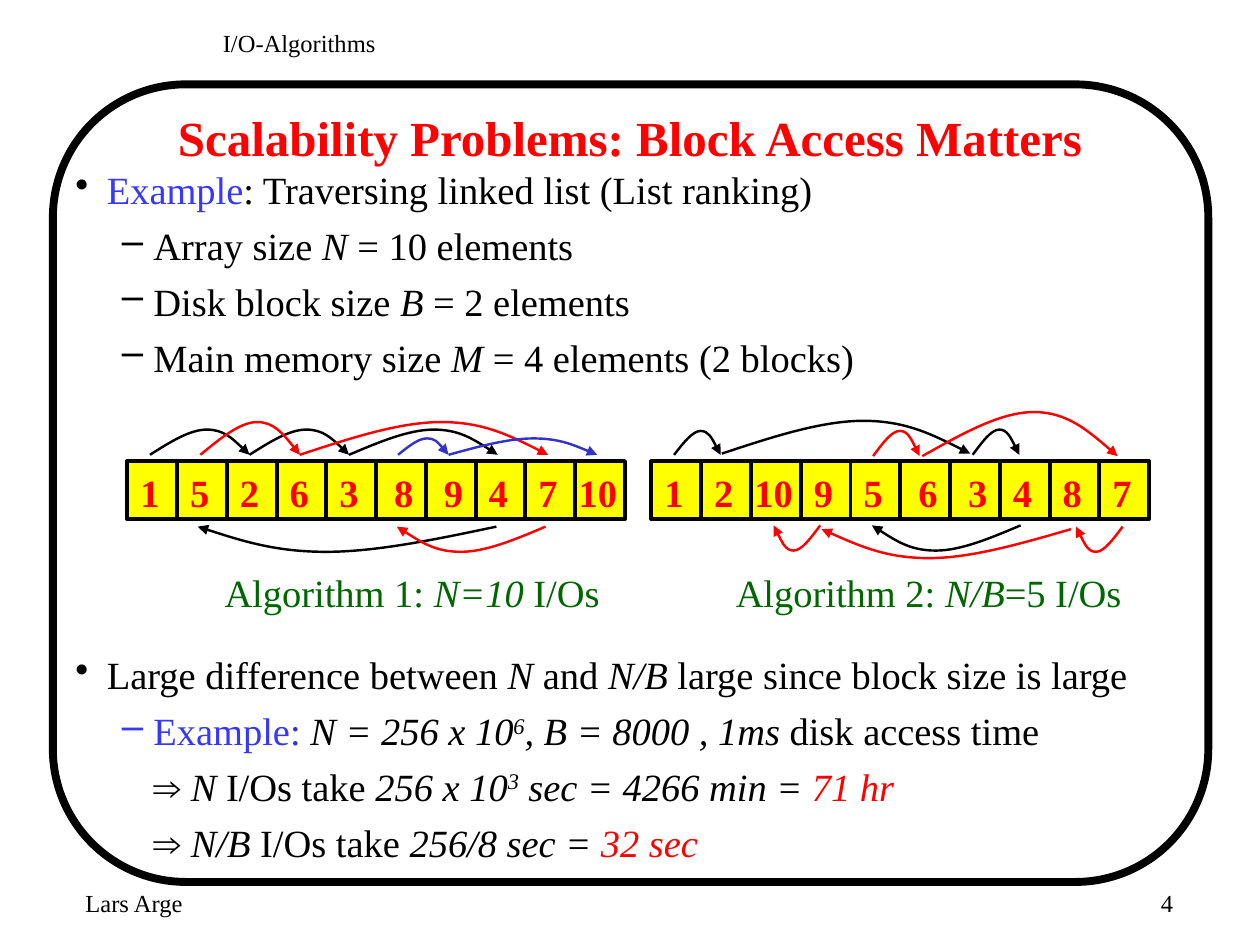
"""Build the slide on block access and linked list traversal."""
import pptx
import pptx.dml.color
import pptx.enum.shapes
import pptx.enum.text
import pptx.oxml
import pptx.oxml.ns
import pptx.util
import lxml.etree

Inches = pptx.util.Inches
ALIGN = pptx.enum.text.PP_ALIGN
SHAPE = pptx.enum.shapes.MSO_SHAPE
qn = pptx.oxml.ns.qn

THEME = {
    "font": "Times New Roman",
    "black": "000000", "red": "FF0000", "yellow": "FFFF00", "green": "006600",
    "blue": "3737FF", "navy": "3333CC",
    "title": 28, "body": 22, "footer": 14,
    "frame": 4.5, "grid": 2.25, "thin": 1.38,
}


def style_line(shape, color, width):
    line = shape.line
    line.color.rgb = pptx.dml.color.RGBColor.from_string(THEME[color])
    line.width = pptx.util.Pt(THEME[width])
    properties = shape.element.spPr
    if properties.find(qn("a:effectLst")) is None:
        lxml.etree.SubElement(properties, qn("a:effectLst"))
    return properties.find(qn("a:ln"))


def add_text(box, paragraphs, size, color="black", align=ALIGN.LEFT, bold=False, wrap=True,
             anchor=pptx.enum.text.MSO_ANCHOR.TOP):
    frame = slide.shapes.add_textbox(*map(Inches, box)).text_frame
    for name, value in {"word_wrap": wrap, "vertical_anchor": anchor}.items():
        setattr(frame, name, value)
    for index, (bullet, left, hang, runs) in enumerate(paragraphs):
        paragraph = frame.paragraphs[0] if index == 0 else frame.add_paragraph()
        paragraph.alignment = align
        if len(paragraphs) > 1:
            paragraph.space_after = pptx.util.Pt(5.5)
        properties = paragraph._p.get_or_add_pPr()
        properties.set("marL", str(Inches(left)))
        properties.set("indent", str(Inches(-hang)))
        if bullet == "•":
            bullet_color = lxml.etree.SubElement(properties, qn("a:buClr"))
            lxml.etree.SubElement(bullet_color, qn("a:srgbClr"), val=THEME["black"])
        if bullet:
            lxml.etree.SubElement(properties, qn("a:buChar"), char=bullet)
        for text, style, *run_color in runs:
            run = paragraph.add_run()
            run.text = text
            values = {"name": THEME["font"], "size": pptx.util.Pt(THEME[size]),
                      "bold": bold, "italic": "i" in style}
            for name, value in values.items():
                setattr(run.font, name, value)
            rgb = THEME[run_color[0] if run_color else color]
            run.font.color.rgb = pptx.dml.color.RGBColor.from_string(rgb)
            if "^" in style:
                run._r.get_or_add_rPr().set("baseline", "30000")


presentation = pptx.Presentation()
presentation.slide_width, presentation.slide_height = Inches(10), Inches(7.5)
slide = presentation.slides.add_slide(presentation.slide_layouts[6])

frame_shape = slide.shapes.add_shape(
    SHAPE.FLOWCHART_ALTERNATE_PROCESS, *map(Inches, (0.42, 0.67, 9.17, 6.33)))
frame_shape.fill.background()
style_line(frame_shape, "black", "frame")

add_text((0.75, 0.75, 8.5, 0.67), [("", 0, 0, [("Scalability Problems: Block Access Matters", "")])],
         "title", "red", ALIGN.CENTER, bold=True, anchor=pptx.enum.text.MSO_ANCHOR.MIDDLE)

setup = [
    ("•", 0.25, 0.25, [("Example", "", "blue"), (": Traversing linked list (List ranking)", "")]),
    ("–", 0.62, 0.25, [("Array size ", ""), ("N", "i"), (" = 10 elements", "")]),
    ("–", 0.62, 0.25, [("Disk block size ", ""), ("B", "i"), (" = 2 elements", "")]),
    ("–", 0.62, 0.25, [("Main memory size ", ""), ("M", "i"), (" = 4 elements (2 blocks)", "")]),
]
conclusion = [
    ("•", 0.25, 0.25, [("Large difference between ", ""), ("N", "i"), (" and ", ""), ("N/B", "i"),
                       (" large since block size is large", "")]),
    ("–", 0.62, 0.25, [("Example", "", "blue"), (":", "", "navy"), (" N = 256 x 10", "i"),
                       ("6", "i^"), (", B = 8000 , 1ms ", "i"), ("disk access time", "")]),
    ("", 0.62, 0, [("⇒ ", ""), ("N ", "i"), ("I/Os take", ""), (" 256 x 10", "i"), ("3", "i^"),
                   (" sec = 4266 min = ", "i"), ("71 hr", "i", "red")]),
    ("", 0.62, 0, [("⇒ ", ""), ("N/B ", "i"), ("I/Os take", ""), (" 256/8 sec = ", "i"),
                   ("32 sec", "i", "red")]),
]
add_text((0.5, 1.27, 8.83, 1.9), setup, "body")
add_text((0.5, 5.12, 8.83, 1.9), conclusion, "body")

labels = [
    ((1.28, 4.47, 3.98, 0.47), [("Algorithm 1: ", ""), ("N=10", "i"), (" I/Os", "")]),
    ((5.72, 4.47, 3.3, 0.47), [("Algorithm 2: ", ""), ("N/B", "i"), ("=5 I/Os", "")]),
]
for box, runs in labels:
    add_text(box, [("", 0, 0, runs)], "body", "green", ALIGN.CENTER)

array_top, array_height, array_width = 3.66, 0.46, 3.95
cell_width = array_width / 10
arrays = [(1.01, [1, 5, 2, 6, 3, 8, 9, 4, 7, 10]), (5.17, [1, 2, 10, 9, 5, 6, 3, 4, 8, 7])]
for array_left, numbers in arrays:
    for block in range(5):
        block_shape = slide.shapes.add_shape(
            SHAPE.RECTANGLE, Inches(array_left + 2 * block * cell_width), Inches(array_top),
            Inches(2 * cell_width), Inches(array_height))
        block_shape.fill.solid()
        block_shape.fill.fore_color.rgb = pptx.dml.color.RGBColor.from_string(THEME["yellow"])
        style_line(block_shape, "black", "thin")
    border = slide.shapes.add_shape(
        SHAPE.RECTANGLE, *map(Inches, (array_left, array_top, array_width, array_height)))
    border.fill.background()
    style_line(border, "black", "grid")
    for column, number in enumerate(numbers):
        cell_left = array_left + column * cell_width
        if column:
            divider = slide.shapes.add_connector(
                pptx.enum.shapes.MSO_CONNECTOR.STRAIGHT, Inches(cell_left), Inches(array_top),
                Inches(cell_left), Inches(array_top + array_height))
            style_line(divider, "black", "grid")
        text_width = 0.51 if number == 10 else 0.36
        center = cell_left + (0.22 if column in (5, 6) else 0.18)
        add_text((center - text_width / 2, 3.67, text_width, 0.47),
                 [("", 0, 0, [(str(number), "")])], "body", "red", ALIGN.CENTER,
                 bold=True, wrap=False)

arcs = [
    (1.19, 1.98, 3.61, 3.41, "black"), (1.98, 2.77, 3.61, 3.41, "black"),
    (1.59, 2.38, 3.61, 3.35, "red"), (2.77, 3.95, 3.61, 3.41, "black"),
    (2.38, 4.35, 3.61, 3.35, "red"), (3.94, 1.57, 4.18, 4.38, "black"),
    (4.33, 3.15, 4.18, 4.38, "red"), (3.16, 3.56, 3.61, 3.48, "navy"),
    (3.56, 4.74, 3.61, 3.48, "navy"), (5.35, 5.72, 3.61, 3.42, "black"),
    (6.93, 7.3, 3.62, 3.42, "red"), (7.72, 8.09, 3.61, 3.41, "black"),
    (6.51, 6.14, 4.17, 4.37, "red"), (8.91, 8.54, 4.18, 4.38, "red"),
    (5.73, 7.7, 3.6, 3.34, "black"), (8.1, 6.92, 4.17, 4.37, "black"),
    (7.32, 8.87, 3.62, 3.27, "red"), (8.5, 6.52, 4.2, 4.43, "red"),
]
curve = [(0.2, 0.5), (0.4, 1), (0.57, 1), (0.74, 1), (0.87, 0.5), (1, 0)]
for start, end, base, peak, color in arcs:
    builder = slide.shapes.build_freeform(Inches(start), Inches(base))
    builder.add_line_segments(
        [(Inches(start + across * (end - start)), Inches(base + rise * (peak - base)))
         for across, rise in curve], close=False)
    arc = builder.convert_to_shape()
    outline = next(arc.element.iter(qn("a:path")))
    segments = outline.findall(qn("a:lnTo"))
    for first in (0, 3):
        bezier = lxml.etree.SubElement(outline, qn("a:cubicBezTo"))
        for segment in segments[first:first + 3]:
            bezier.append(segment[0])
            outline.remove(segment)
    arc.fill.background()
    line = style_line(arc, color, "thin")
    lxml.etree.SubElement(line, qn("a:tailEnd"), type="triangle")

footers = [
    ((7.33, 7, 2.08, 0.5), "4", ALIGN.RIGHT),
    ((0.58, 7, 2.08, 0.5), "Lars Arge", ALIGN.LEFT),
    ((1.67, 0.17, 6.58, 0.42), "I/O-Algorithms", ALIGN.LEFT),
]
for box, text, align in footers:
    add_text(box, [("", 0, 0, [(text, "")])], "footer", align=align)

presentation.save("out.pptx")
